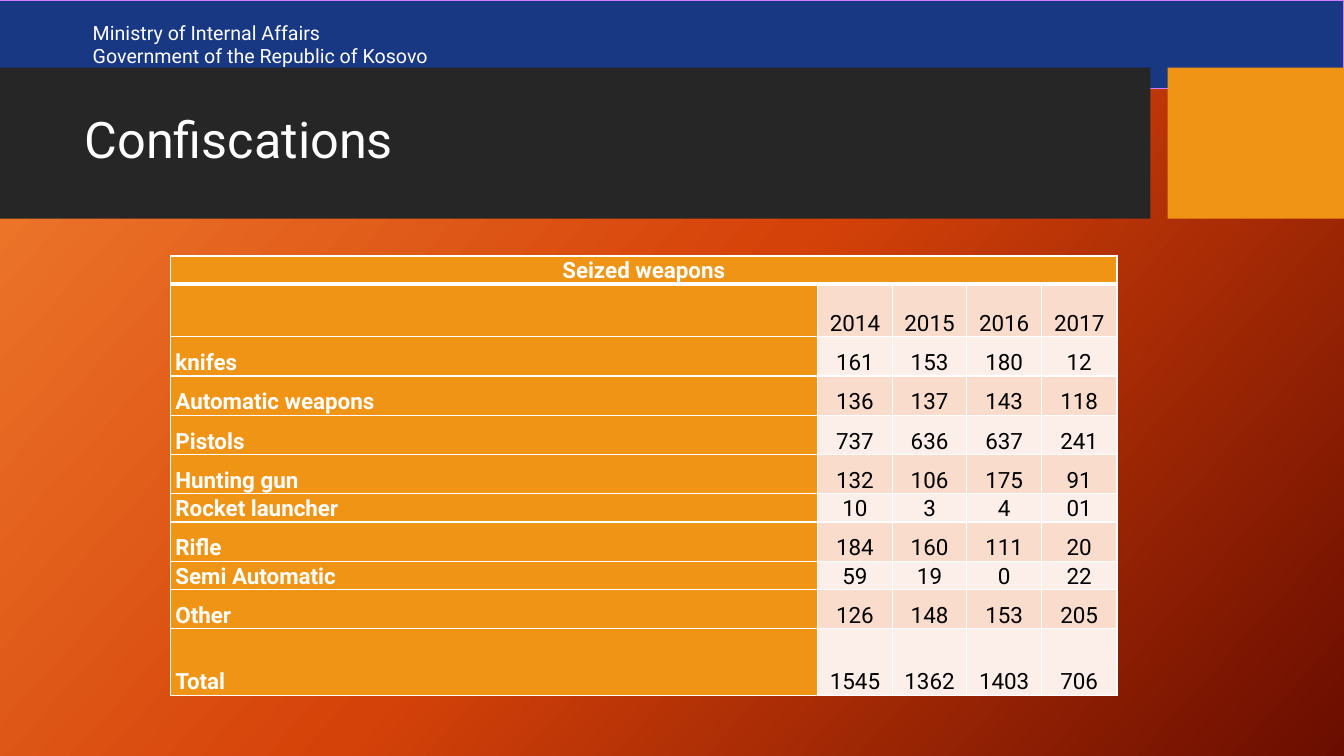
from lxml.etree import SubElement
from pptx import Presentation
from pptx.dml.color import RGBColor
from pptx.enum.shapes import MSO_SHAPE
from pptx.enum.text import MSO_ANCHOR, PP_ALIGN
from pptx.oxml.ns import qn
from pptx.util import Inches, Pt

FONT = "Roboto"
WHITE = "FFFFFF"
ORANGE = "F09415"
BANDS = ("F9DCCC", "FCEEE8")
COLUMN_WIDTHS = (6.42, 0.74, 0.74, 0.74, 0.75)
# Row height, label, value for each year
ROWS = [
    (0.52, "", "2014", "2015", "2016", "2017"),
    (0.39, "knifes", "161", "153", "180", "12"),
    (0.39, "Automatic weapons", "136", "137", "143", "118"),
    (0.39, "Pistols", "737", "636", "637", "241"),
    (0.39, "Hunting gun", "132", "106", "175", "91"),
    (0.26, "Rocket launcher", "10", "3", "4", "01"),
    (0.39, "Rifle", "184", "160", "111", "20"),
    (0.26, "Semi Automatic", "59", "19", "0", "22"),
    (0.39, "Other", "126", "148", "153", "205"),
    (0.66, "Total", "1545", "1362", "1403", "706"),
]


def color(hex_string):
    return RGBColor.from_string(hex_string)


def style_font(paragraph, size, hex_color, bold=False):
    font = paragraph.font
    font.name = FONT
    font.size = Pt(size)
    font.bold = bold
    font.color.rgb = color(hex_color)


def set_gradient_background(slide, stops, clockwise_angle):
    fill = slide.background.fill
    fill.gradient()
    fill.gradient_angle = 360 - clockwise_angle
    stop_list = next(slide.background._cSld.iter(qn("a:gsLst")))
    for old_stop in list(stop_list):
        stop_list.remove(old_stop)
    for percent, hex_color in stops:
        stop = SubElement(stop_list, qn("a:gs"), pos=str(percent * 1000))
        SubElement(stop, qn("a:srgbClr"), val=hex_color)


def add_block(slide, left, top, width, height, fill, line=None):
    shape = slide.shapes.add_shape(
        MSO_SHAPE.RECTANGLE, Inches(left), Inches(top), Inches(width), Inches(height))
    shape.shadow.inherit = False
    shape.fill.solid()
    shape.fill.fore_color.rgb = color(fill)
    if line:
        shape.line.color.rgb = color(line)
        shape.line.width = Pt(0.75)
    else:
        shape.line.fill.background()
    return shape


def write_lines(shape, lines, size, left_margin=0.1):
    frame = shape.text_frame
    frame.word_wrap = True
    frame.vertical_anchor = MSO_ANCHOR.MIDDLE
    frame.margin_left = Inches(left_margin)
    frame.text = "\n".join(lines)
    for paragraph in frame.paragraphs:
        paragraph.alignment = PP_ALIGN.LEFT
        style_font(paragraph, size, WHITE)


def add_title(slide, text):
    box = slide.shapes.add_textbox(Inches(0.74), Inches(0.82), Inches(10.51), Inches(1.18))
    write_lines(box, [text], 36)
    box.text_frame.paragraphs[0].line_spacing = 0.9


def set_borders(cell, top=1, bottom=1):
    properties = cell._tc.get_or_add_tcPr()
    for side, width in (("L", 1), ("R", 1), ("T", top), ("B", bottom)):
        line = SubElement(properties, qn(f"a:ln{side}"), w=str(Pt(width)))
        fill = SubElement(line, qn("a:solidFill"))
        SubElement(fill, qn("a:srgbClr"), val=WHITE)


def fill_cell(cell, text, fill, font_color, alignment, bold=False):
    cell.fill.solid()
    cell.fill.fore_color.rgb = color(fill)
    cell.vertical_anchor = MSO_ANCHOR.BOTTOM
    cell.margin_left = cell.margin_right = Inches(0.05)
    cell.margin_top = cell.margin_bottom = 0
    cell.text = text
    paragraph = cell.text_frame.paragraphs[0]
    paragraph.alignment = alignment
    paragraph.line_spacing = 1.05
    style_font(paragraph, 16, font_color, bold)


def add_weapons_table(slide):
    table = slide.shapes.add_table(
        len(ROWS) + 1, len(COLUMN_WIDTHS),
        Inches(1.69), Inches(2.54), Inches(9.39), Inches(4.31)).table
    table.first_row = table.horz_banding = False
    for column, width in zip(table.columns, COLUMN_WIDTHS):
        column.width = Inches(width)

    table.rows[0].height = Inches(0.27)
    heading = table.cell(0, 0)
    heading.merge(table.cell(0, len(COLUMN_WIDTHS) - 1))
    for cell in table.rows[0].cells:
        set_borders(cell, bottom=3)
    fill_cell(heading, "Seized weapons", ORANGE, WHITE, PP_ALIGN.CENTER, bold=True)

    for row, (height, label, *values) in enumerate(ROWS, start=1):
        table.rows[row].height = Inches(height)
        for cell in table.rows[row].cells:
            set_borders(cell, top=3 if row == 1 else 1)
        fill_cell(table.cell(row, 0), label, ORANGE, WHITE, PP_ALIGN.JUSTIFY, bold=True)
        for column, value in enumerate(values, start=1):
            fill_cell(table.cell(row, column), value, BANDS[(row - 1) % 2],
                      "000000", PP_ALIGN.CENTER)


def main():
    presentation = Presentation()
    presentation.slide_width = Inches(13.33)
    presentation.slide_height = Inches(7.5)
    slide = presentation.slides.add_slide(presentation.slide_layouts[6])
    set_gradient_background(slide, [(0, "F18031"), (50, "D54209"), (100, "6A0D00")], 42)

    banner = add_block(slide, 0, 0, 13.33, 0.88, "183883", line="D17DF9")
    write_lines(banner, ["Ministry of Internal Affairs",
                         "Government of the Republic of Kosovo"], 14, left_margin=0.92)
    add_block(slide, 0, 0.67, 11.41, 1.5, "262626")
    add_block(slide, 11.58, 0.67, 1.75, 1.5, ORANGE)
    add_title(slide, "Confiscations")
    add_weapons_table(slide)
    presentation.save("out.pptx")


if __name__ == "__main__":
    main()
